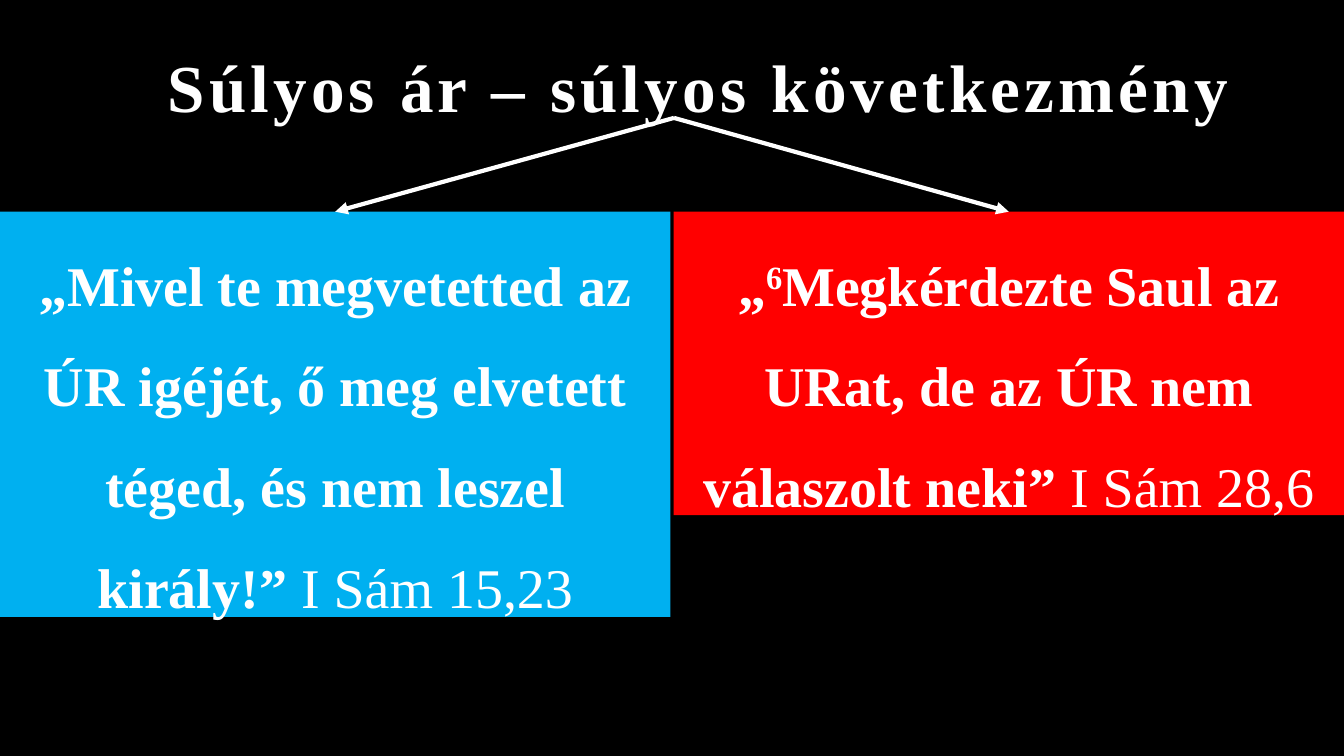
from pptx import Presentation
from pptx.dml.color import RGBColor
from pptx.enum.shapes import MSO_CONNECTOR as Connector, MSO_SHAPE as Shape
from pptx.enum.text import MSO_ANCHOR as Anchor, MSO_AUTO_SIZE as AutoSize, PP_ALIGN as Align
from pptx.oxml.ns import qn
from pptx.util import Inches, Pt
from lxml.etree import SubElement

WHITE, BLACK, BLUE, RED = "FFFFFF", "000000", "00B0F0", "FF0000"
TOP, BOTTOM = 0, 2  # connection sites


def color(hex_value):
    return RGBColor.from_string(hex_value)


def add_text(paragraph, text, size=40, bold=True, spacing=None, baseline=None):
    run = paragraph.add_run()
    run.text = text
    font = run.font
    font.name, font.size, font.bold = "Times New Roman", Pt(size), bold
    font.color.rgb = color(WHITE)
    properties = run._r.get_or_add_rPr()
    if spacing is not None:
        properties.set("spc", str(spacing * 100))
    if baseline is not None:
        properties.set("baseline", str(baseline * 1000))


def prepare_paragraph(shape):
    frame = shape.text_frame
    frame.word_wrap = True
    frame.auto_size = AutoSize.SHAPE_TO_FIT_TEXT
    frame.vertical_anchor = Anchor.TOP
    paragraph = frame.paragraphs[0]
    paragraph.alignment = Align.CENTER
    paragraph.line_spacing = 1.5
    return paragraph


def add_title(slide, left, top, width, height, text):
    title = slide.shapes.title
    title.left, title.top = Inches(left), Inches(top)
    title.width, title.height = Inches(width), Inches(height)
    paragraph = prepare_paragraph(title)
    paragraph._p.get_or_add_pPr().set("indent", str(Inches(0.49)))
    add_text(paragraph, text, size=48, spacing=3)
    return title


def add_verse(slide, left, top, width, height, fill, parts):
    box = slide.shapes.add_shape(
        Shape.RECTANGLE, Inches(left), Inches(top), Inches(width), Inches(height))
    box.shadow.inherit = False
    box.fill.solid()
    box.fill.fore_color.rgb = color(fill)
    box.line.fill.background()
    paragraph = prepare_paragraph(box)
    for text, text_format in parts:
        add_text(paragraph, text, **text_format)
    return box


def add_arrow(slide, source, target):
    arrow = slide.shapes.add_connector(Connector.STRAIGHT, 0, 0, 0, 0)
    arrow.begin_connect(source, BOTTOM)
    arrow.end_connect(target, TOP)
    arrow.line.color.rgb = color(WHITE)
    arrow.line.width = Pt(3)
    SubElement(arrow.line._get_or_add_ln(), qn("a:tailEnd"), type="triangle")
    SubElement(arrow._element.spPr, qn("a:effectLst"))


def build_slide(presentation):
    slide = presentation.slides.add_slide(presentation.slide_layouts[5])
    slide.background.fill.solid()
    slide.background.fill.fore_color.rgb = color(BLACK)

    # Heading
    title = add_title(slide, 0.02, 0, 13.33, 1.17, "Súlyos ár – súlyos következmény")

    # Two verses side by side
    verses = [
        (0, 4.02, BLUE, [
            ("„Mivel te megvetetted az ÚR igéjét, ő meg elvetett téged, "
             "és nem leszel király!” ", {}),
            ("I Sám 15,23", {"bold": False})]),
        (6.68, 3.01, RED, [
            ("„", {}),
            ("6", {"baseline": 30}),
            ("Megkérdezte Saul az URat, de az ÚR nem válaszolt neki” ", {}),
            ("I Sám 28,6", {"bold": False})]),
    ]
    boxes = [add_verse(slide, left, 2.1, 6.65, height, fill, parts)
             for left, height, fill, parts in verses]

    # Arrows from the heading to each verse
    for box in boxes:
        add_arrow(slide, title, box)


def main():
    presentation = Presentation()
    presentation.slide_width, presentation.slide_height = Inches(13.33), Inches(7.5)
    build_slide(presentation)
    presentation.save("out.pptx")


if __name__ == "__main__":
    main()
